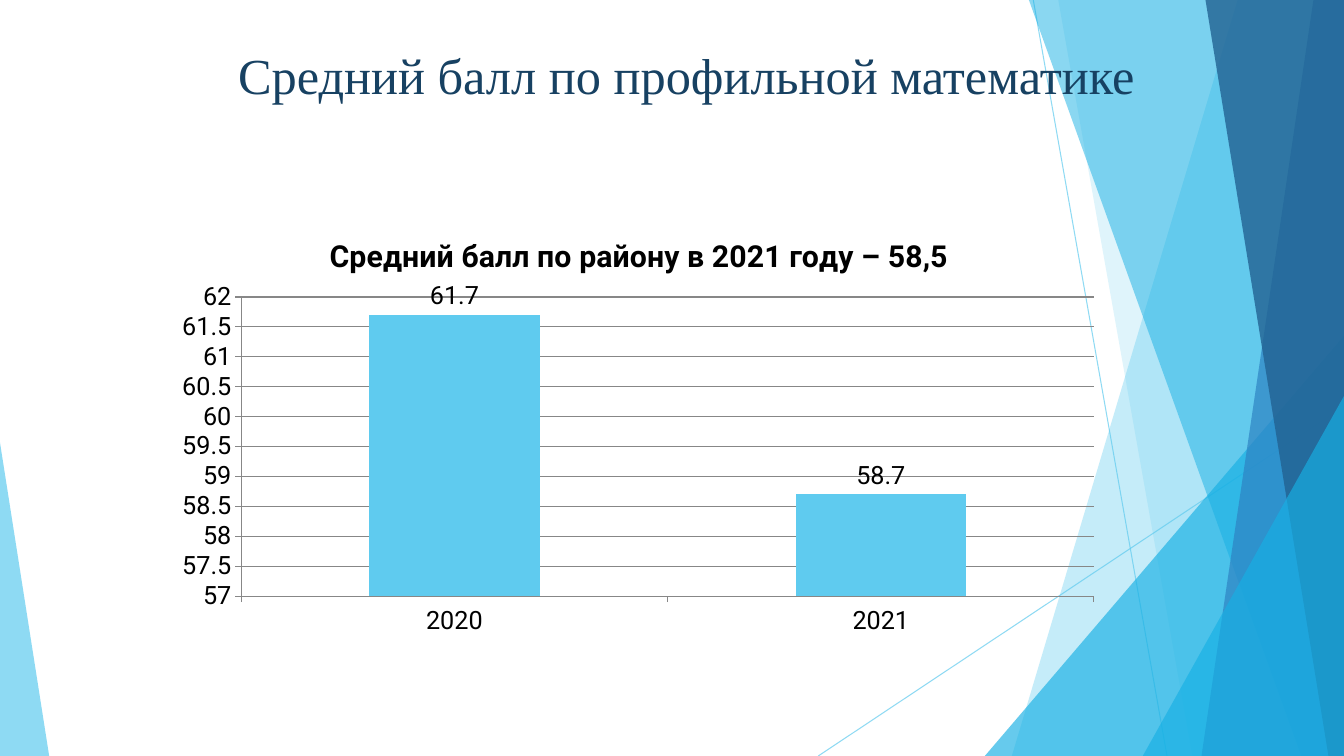
from pptx import Presentation
from pptx.chart.data import CategoryChartData
from pptx.dml.color import RGBColor
from pptx.enum.chart import XL_CHART_TYPE as ChartType, XL_LABEL_POSITION as LabelPosition
from pptx.enum.chart import XL_TICK_MARK as TickMark
from pptx.enum.shapes import MSO_CONNECTOR as Connector, MSO_SHAPE as Shape
from pptx.enum.text import MSO_ANCHOR as Anchor, PP_ALIGN as Align
from pptx.oxml.ns import qn
from pptx.util import Cm, Pt
from lxml.etree import SubElement

SKY = RGBColor(0x5F, 0xCB, 0xEF)
CYAN = RGBColor(0x17, 0xB0, 0xE4)
BLUE = RGBColor(0x2E, 0x83, 0xC3)
NAVY = RGBColor(0x22, 0x62, 0x92)
TITLE_COLOR = RGBColor(0x17, 0x41, 0x62)
BLACK = RGBColor(0, 0, 0)
GRAY = RGBColor(0x87, 0x87, 0x87)

WIDTH, HEIGHT = 33.87, 19.05


def set_opacity(color_format, percent):
    color = color_format._xFill.find(qn("a:srgbClr"))
    SubElement(color, qn("a:alpha")).set("val", str(percent * 1000))


def paint(shape, color, opacity):
    shape.shadow.inherit = False
    shape.fill.solid()
    shape.fill.fore_color.rgb = color
    set_opacity(shape.fill.fore_color, opacity)
    shape.line.fill.background()


def add_ray(slide, start, end):
    ray = slide.shapes.add_connector(Connector.STRAIGHT, *map(Cm, start + end))
    ray.line.color.rgb = SKY
    ray.line.width = Pt(0.75)
    set_opacity(ray.line.fill.fore_color, 70)
    SubElement(ray._element.spPr, qn("a:effectLst"))


def add_band(slide, top_x, bottom_x, color, opacity):
    """Band with a slanted left side, reaching the right edge of the slide."""
    builder = slide.shapes.build_freeform(Cm(top_x), Cm(0))
    corners = [(WIDTH, 0), (WIDTH, HEIGHT), (bottom_x, HEIGHT)]
    builder.add_line_segments([(Cm(x), Cm(y)) for x, y in corners], close=True)
    paint(builder.convert_to_shape(), color, opacity)


def add_corner(slide, left, right, top, peak, color, opacity):
    """Triangle standing on the bottom edge of the slide."""
    triangle = slide.shapes.add_shape(
        Shape.ISOSCELES_TRIANGLE, Cm(left), Cm(top), Cm(right - left), Cm(HEIGHT - top))
    triangle.adjustments[0] = peak
    paint(triangle, color, opacity)


def write_text(text_frame, text, size, color, font_name=None, bold=None, align=None):
    paragraph = text_frame.paragraphs[0]
    paragraph.alignment = align
    run = paragraph.add_run()
    run.text = text
    font = run.font
    font.size, font.bold, font.name = Pt(size), bold, font_name
    font.color.rgb = color


def add_title(slide, text):
    title = slide.shapes.title
    slide.shapes._spTree.append(title._element)  # in front of the decoration
    title.left, title.top, title.width, title.height = map(Cm, (2.21, 0.99, 30.18, 3.66))
    title.text_frame.vertical_anchor = Anchor.TOP
    write_text(title.text_frame, text, 36, TITLE_COLOR, "Times New Roman", align=Align.CENTER)


def set_plot_area(chart, **fractions):
    plot_area = chart._chartSpace.chart.plotArea
    for layout in plot_area.findall(qn("c:layout")):
        plot_area.remove(layout)
    layout = plot_area.makeelement(qn("c:layout"))
    plot_area.insert(0, layout)
    manual = SubElement(layout, qn("c:manualLayout"))
    settings = {"layoutTarget": "inner", "xMode": "edge", "yMode": "edge", **fractions}
    for name, value in settings.items():
        SubElement(manual, qn(f"c:{name}")).set("val", str(value))


def add_score_chart(slide, title, scores):
    data = CategoryChartData()
    data.categories = list(scores)
    data.add_series("Series 1", list(scores.values()))
    chart = slide.shapes.add_chart(
        ChartType.COLUMN_CLUSTERED, Cm(4.17), Cm(5.44), Cm(23.88), Cm(10.77), data).chart
    chart.has_legend = False
    chart.font.name, chart.font.size = "Roboto", Pt(18)
    chart.font.color.rgb = BLACK
    chart.has_title = True
    write_text(chart.chart_title.text_frame, title, 21.6, BLACK, "Roboto", bold=True)
    chart.chart_title.include_in_layout = False
    set_plot_area(chart, x=0.08, y=0.19, w=0.9, h=0.7)

    # Axes
    for axis in (chart.category_axis, chart.value_axis):
        axis.major_tick_mark = TickMark.OUTSIDE
        axis.format.line.color.rgb = GRAY
    scale = chart.value_axis
    scale.minimum_scale, scale.maximum_scale, scale.major_unit = 57, 62, 0.5
    scale.tick_labels.number_format = "General"
    scale.tick_labels.number_format_is_linked = False
    scale.has_major_gridlines = True
    scale.major_gridlines.format.line.color.rgb = GRAY

    # Columns and their values
    plot = chart.plots[0]
    plot.vary_by_categories = False
    plot.gap_width = 150
    fill = plot.series[0].format.fill
    fill.solid()
    fill.fore_color.rgb = SKY
    labels = plot.series[0].data_labels
    labels.show_value = True
    labels.position = LabelPosition.OUTSIDE_END


def add_decoration(slide):
    add_ray(slide, (26.04, 0), (29.41, HEIGHT))
    add_ray(slide, (WIDTH, 10.24), (20.62, HEIGHT))
    add_band(slide, 31.19, 25.5, SKY, 36)
    add_band(slide, 26.67, 30.05, SKY, 20)
    add_corner(slide, 24.82, WIDTH, 8.46, 1, CYAN, 66)
    add_band(slide, 25.93, 32.79, CYAN, 50)
    add_band(slide, 33.1, 30.28, BLUE, 70)
    add_band(slide, 30.38, 33.48, NAVY, 80)
    add_corner(slide, 28.8, WIDTH, 9.98, 1, CYAN, 66)
    add_corner(slide, 0, 1.24, 11.15, 0, SKY, 70)


def main():
    presentation = Presentation()
    presentation.slide_width, presentation.slide_height = Cm(WIDTH), Cm(HEIGHT)
    title_only = presentation.slide_layouts[5]
    slide = presentation.slides.add_slide(title_only)
    add_decoration(slide)
    add_title(slide, "Средний балл по профильной математике")
    add_score_chart(slide, "Средний балл по району в 2021 году – 58,5",
                    {"2020": 61.7, "2021": 58.7})
    presentation.save("out.pptx")


if __name__ == "__main__":
    main()
